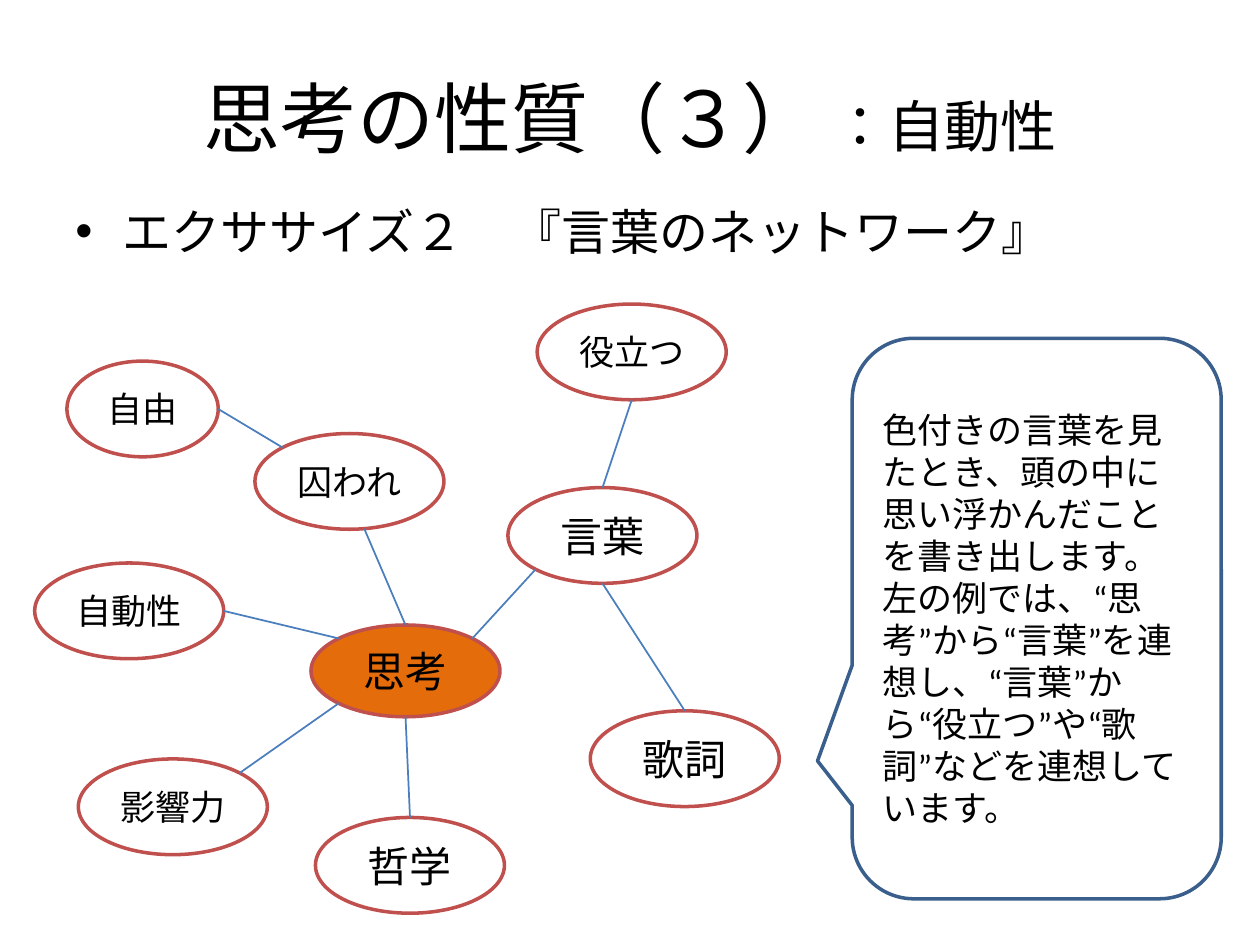
from collections import namedtuple
from math import cos, radians, sin

from lxml import etree
from pptx import Presentation
from pptx.dml.color import RGBColor
from pptx.enum.lang import MSO_LANGUAGE_ID
from pptx.enum.shapes import MSO_CONNECTOR, MSO_SHAPE
from pptx.enum.text import MSO_ANCHOR, PP_ALIGN
from pptx.oxml.ns import qn
from pptx.util import Cm, Pt

OVAL = MSO_SHAPE.OVAL
CALLOUT = MSO_SHAPE.ROUNDED_RECTANGULAR_CALLOUT
STRAIGHT = MSO_CONNECTOR.STRAIGHT
MIDDLE = MSO_ANCHOR.MIDDLE
LEFT, CENTER = PP_ALIGN.LEFT, PP_ALIGN.CENTER
JAPANESE = MSO_LANGUAGE_ID.JAPANESE

Theme = namedtuple("Theme", "font ink paper core ring frame link head sub lead big small")
theme = Theme(
    font="Calibri",
    ink=RGBColor.from_string("000000"),
    paper=RGBColor.from_string("FFFFFF"),
    core=RGBColor.from_string("E46C0A"),
    ring=RGBColor.from_string("C0504D"),
    frame=RGBColor.from_string("3A5F8C"),
    link=RGBColor.from_string("4B7EBC"),
    head=Pt(44), sub=Pt(32), lead=Pt(28), big=Pt(24), small=Pt(20),
)


def style(run, size):
    """Set the run's type, with the East Asian font too so quotes stay narrow."""
    run.font.name = theme.font
    run.font.size = size
    run.font.color.rgb = theme.ink
    run.font.language_id = JAPANESE
    etree.SubElement(run._r.get_or_add_rPr(), qn("a:ea")).set("typeface", theme.font)


def add_box(parent, kind, box, text, size, align, line, fill=None):
    """Add an outlined shape with middle-anchored text; no fill unless given."""
    shape = parent.add_shape(kind, *(Cm(v) for v in box))
    shape.shadow.inherit = False
    if fill is None:
        shape.fill.background()
    else:
        shape.fill.solid()
        shape.fill.fore_color.rgb = fill
    shape.line.color.rgb = line
    shape.line.width = Pt(2)
    frame = shape.text_frame
    frame.text = text
    frame.word_wrap = True
    frame.vertical_anchor = MIDDLE
    para = frame.paragraphs[0]
    para.alignment = align
    style(para.runs[0], size)
    return shape


deck = Presentation()
deck.slide_width, deck.slide_height = Cm(25.4), Cm(19.05)
slide = deck.slides.add_slide(deck.slide_layouts[5])
shapes = slide.shapes

# Title
title = shapes.title
title.left, title.top, title.width, title.height = Cm(1.27), Cm(0.76), Cm(22.86), Cm(3.18)
title.text_frame.vertical_anchor = MIDDLE
para = title.text_frame.paragraphs[0]
para.alignment = CENTER
for text, size in (("思考の性質（３）", theme.head), (" ：自動性", theme.sub)):
    run = para.add_run()
    run.text = text
    style(run, size)

# Bulleted lead line
lead = shapes.add_textbox(Cm(1.27), Cm(3.94), Cm(22.86), Cm(13.08)).text_frame
lead.word_wrap = True
lead.text = "エクササイズ２　『言葉のネットワーク』"
para = lead.paragraphs[0]
para.space_before = Pt(5.6)
style(para.runs[0], theme.lead)
props = para._p.get_or_add_pPr()
props.set("marL", str(Cm(0.95)))
props.set("indent", str(-Cm(0.95)))
etree.SubElement(props, qn("a:buFont")).set("typeface", "Arial")
etree.SubElement(props, qn("a:buChar")).set("char", "•")

# Explanation
note = add_box(
    shapes, CALLOUT, (17.18, 6.82, 7.44, 11.3),
    "色付きの言葉を見たとき、頭の中に思い浮かんだことを書き出します。"
    "左の例では、“思考”から“言葉”を連想し、“言葉”から“役立つ”や“歌詞”などを連想しています。",
    theme.small, LEFT, theme.frame,
)
for i, value in enumerate((-0.594, 0.254, 0.167)):
    note.adjustments[i] = value

# Word network: word, left, top, width, height, type size
WIDE, TALL = 3.81, 1.93
words = (
    ("思考", 6.27, 12.6, WIDE, 1.85, theme.big),
    ("自由", 1.35, 7.28, 3.05, TALL, theme.small),
    ("影響力", 1.58, 15.3, WIDE, TALL, theme.small),
    ("歌詞", 11.9, 14.33, WIDE, TALL, theme.big),
    ("哲学", 6.36, 16.48, WIDE, TALL, theme.big),
    ("自動性", 0.7, 11.35, WIDE, TALL, theme.small),
    ("役立つ", 10.83, 6.13, WIDE, TALL, theme.small),
    ("囚われ", 5.14, 8.74, WIDE, TALL, theme.small),
    ("言葉", 10.24, 9.83, WIDE, TALL, theme.big),
)
net = shapes.add_group_shape().shapes
nodes = {}
for word, *box, size in words:
    fill = theme.core if word == "思考" else theme.paper
    nodes[word] = add_box(net, OVAL, box, word, size, CENTER, theme.ring, fill)

# Each link joins two ovals at angles in degrees, clockwise from the right
links = (
    ("思考", 270, "囚われ", 81),
    ("囚われ", 225, "自由", 0),
    ("思考", 225, "自動性", 0),
    ("思考", 90, "哲学", 270),
    ("思考", 135, "影響力", 315),
    ("思考", 315, "言葉", 135),
    ("言葉", 90, "歌詞", 270),
    ("言葉", 270, "役立つ", 90),
)
for start, out, end, into in links:
    ends = []
    for word, angle in ((start, out), (end, into)):
        node, turn = nodes[word], radians(angle)
        ends.append(round(node.left + node.width / 2 * (1 + cos(turn))))
        ends.append(round(node.top + node.height / 2 * (1 + sin(turn))))
    link = net.add_connector(STRAIGHT, *ends)
    link.line.color.rgb = theme.link
    link.line.width = Pt(1)
    etree.SubElement(link._element.spPr, qn("a:effectLst"))

deck.save("out.pptx")
